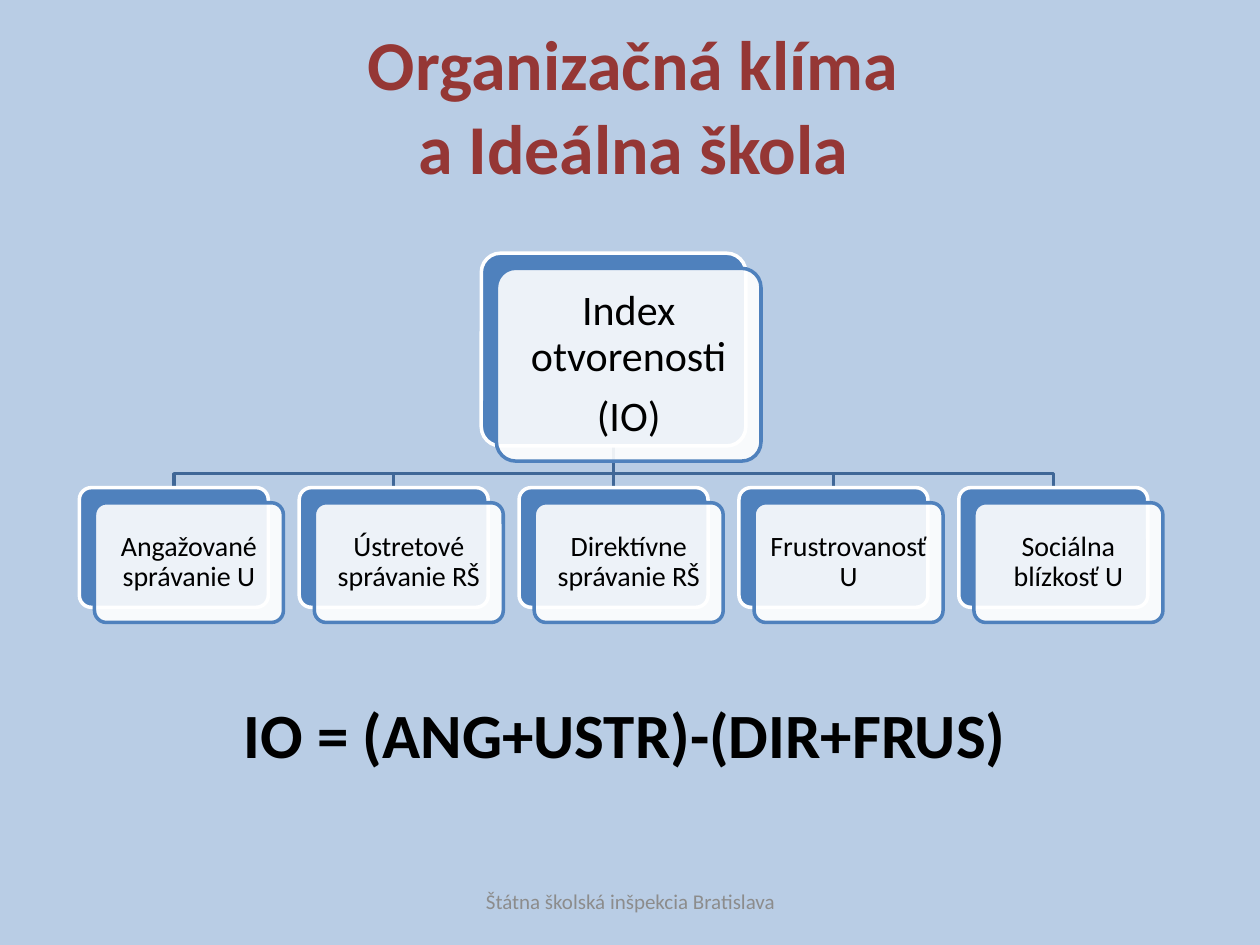
from dataclasses import dataclass

from lxml import etree
from pptx import Presentation
from pptx.dml.color import RGBColor
from pptx.enum.shapes import MSO_CONNECTOR, MSO_SHAPE
from pptx.enum.text import MSO_ANCHOR, PP_ALIGN
from pptx.oxml.ns import qn
from pptx.util import Inches, Pt

ROUNDED = MSO_SHAPE.ROUNDED_RECTANGLE
STRAIGHT = MSO_CONNECTOR.STRAIGHT
CENTER = PP_ALIGN.CENTER
MIDDLE = MSO_ANCHOR.MIDDLE
TOP = MSO_ANCHOR.TOP


@dataclass(frozen=True)
class Theme:
    font: str = "Calibri"
    background: str = "B9CDE5"
    title: str = "953735"
    text: str = "000000"
    footer: str = "8C8C8C"
    accent: str = "4F81BD"
    branch: str = "3F6797"
    paper: str = "FFFFFF"
    paper_alpha: int = 90
    line: float = 2
    title_size: int = 40
    formula_size: int = 36
    index_size: int = 24
    factor_size: int = 16
    footer_size: int = 12


@dataclass(frozen=True)
class Box:
    left: float
    top: float
    width: float
    height: float

    @property
    def center(self) -> float:
        return self.left + self.width / 2

    def shifted(self, offset: float) -> "Box":
        return Box(self.left + offset, self.top + offset, self.width, self.height)

    def lengths(self) -> list:
        return [Inches(v) for v in (self.left, self.top, self.width, self.height)]


@dataclass(frozen=True)
class Card:
    box: Box
    lines: tuple
    size: int
    inset: float


THEME = Theme()
CARD_OFFSET = 0.12
BRANCH_Y = 3.76
INDEX = Card(Box(3.82, 2.01, 2.1, 1.53), ("Index otvorenosti", "(IO)"),
             THEME.index_size, 0.1)
FACTOR_LEFT, FACTOR_TOP, FACTOR_PITCH = 0.63, 3.87, 1.745
FACTOR_NAMES = (
    "Angažované správanie U",
    "Ústretové správanie RŠ",
    "Direktívne správanie RŠ",
    "Frustrovanosť U",
    "Sociálna blízkosť U",
)
FACTORS = [
    Card(Box(FACTOR_LEFT + i * FACTOR_PITCH, FACTOR_TOP, 1.5, 0.95), (name,),
         THEME.factor_size, 0.07)
    for i, name in enumerate(FACTOR_NAMES)
]


def rgb(color: str) -> RGBColor:
    return RGBColor.from_string(color)


def write(frame, lines: tuple, size: int, color: str, bold: bool = False,
          anchor=MIDDLE) -> None:
    frame.word_wrap = True
    frame.vertical_anchor = anchor
    for i, line in enumerate(lines):
        paragraph = frame.paragraphs[0] if i == 0 else frame.add_paragraph()
        paragraph.text = line
        paragraph.alignment = CENTER
        paragraph.font.name = THEME.font
        paragraph.font.size = Pt(size)
        paragraph.font.bold = bold
        paragraph.font.color.rgb = rgb(color)


def add_label(slide, box: Box, text: str, size: int, color: str,
              bold: bool = False, anchor=MIDDLE) -> None:
    label = slide.shapes.add_textbox(*box.lengths())
    write(label.text_frame, (text,), size, color, bold, anchor)


def add_panel(slide, box: Box, fill: str, line: str):
    panel = slide.shapes.add_shape(ROUNDED, *box.lengths())
    panel.adjustments[0] = 0.1
    panel.shadow.inherit = False
    panel.fill.solid()
    panel.fill.fore_color.rgb = rgb(fill)
    panel.line.color.rgb = rgb(line)
    panel.line.width = Pt(THEME.line)
    return panel


def add_card(slide, card: Card) -> None:
    add_panel(slide, card.box, THEME.accent, THEME.paper)
    front = add_panel(slide, card.box.shifted(CARD_OFFSET), THEME.paper, THEME.accent)
    color = front.fill._xPr.find(qn("a:solidFill"))[0]
    etree.SubElement(color, qn("a:alpha"), val=str(THEME.paper_alpha * 1000))
    frame = front.text_frame
    frame.margin_left = frame.margin_right = Inches(card.inset)
    frame.margin_top = frame.margin_bottom = Inches(card.inset)
    write(frame, card.lines, card.size, THEME.text)
    for paragraph in frame.paragraphs:
        paragraph.line_spacing = 0.9
        paragraph.space_after = Pt(card.size * 0.35)


def add_branch(slide, parent: Box, child: Box) -> None:
    start_x, start_y = Inches(parent.center), Inches(parent.top + parent.height)
    end_x, end_y = Inches(child.center), Inches(child.top)
    if abs(parent.center - child.center) < 0.05:
        branch = slide.shapes.add_connector(STRAIGHT, start_x, start_y, start_x, end_y)
        etree.SubElement(branch._element.spPr, qn("a:effectLst"))
    else:
        bend_y = Inches(BRANCH_Y)
        outline = slide.shapes.build_freeform(start_x, start_y)
        outline.add_line_segments(
            [(start_x, bend_y), (end_x, bend_y), (end_x, end_y)], close=False)
        branch = outline.convert_to_shape()
        branch.fill.background()
        branch.shadow.inherit = False
    branch.line.color.rgb = rgb(THEME.branch)
    branch.line.width = Pt(THEME.line)


def main() -> None:
    deck = Presentation()
    deck.slide_width, deck.slide_height = Inches(10), Inches(7.5)
    slide = deck.slides.add_slide(deck.slide_layouts[6])
    slide.background.fill.solid()
    slide.background.fill.fore_color.rgb = rgb(THEME.background)

    add_label(slide, Box(0.34, 0.25, 9.37, 1.16), "Organizačná klíma\va Ideálna škola",
              THEME.title_size, THEME.title, bold=True)
    for factor in FACTORS:
        add_branch(slide, INDEX.box, factor.box)
    for card in (INDEX, *FACTORS):
        add_card(slide, card)
    add_label(slide, Box(3.42, 6.95, 3.17, 0.4), "Štátna školská inšpekcia Bratislava",
              THEME.footer_size, THEME.footer)
    add_label(slide, Box(0.69, 5.47, 8.54, 0.93), "IO = (ANG+USTR)-(DIR+FRUS)",
              THEME.formula_size, THEME.text, bold=True, anchor=TOP)
    deck.save("out.pptx")


if __name__ == "__main__":
    main()
